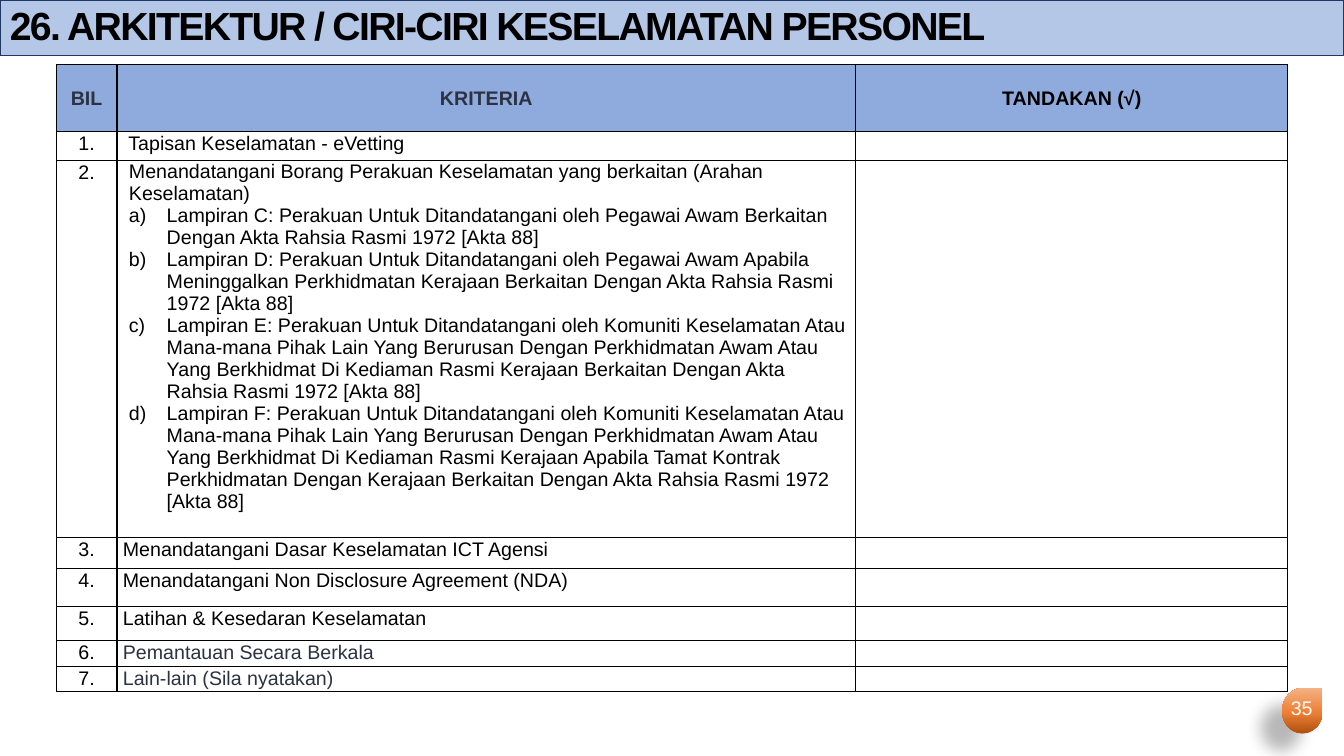
from lxml import etree
from pptx import Presentation
from pptx.dml.color import RGBColor
from pptx.enum.shapes import MSO_SHAPE
from pptx.enum.text import MSO_ANCHOR, PP_ALIGN
from pptx.oxml.ns import qn
from pptx.util import Pt

RECTANGLE, TEARDROP = MSO_SHAPE.RECTANGLE, MSO_SHAPE.TEAR
TOP, MIDDLE = MSO_ANCHOR.TOP, MSO_ANCHOR.MIDDLE
LEFT, CENTER = PP_ALIGN.LEFT, PP_ALIGN.CENTER

COLORS = {
    "black": "000000", "white": "FFFFFF", "slate": "2C3242",
    "banner": "B4C7E7", "banner_line": "203864", "header": "8FAADC",
    "badge_dark": "B0500F", "badge_mid": "EE8137", "badge_light": "F4B183",
}
BADGE_STOPS = [(0, "badge_dark"), (48, "badge_mid"), (100, "badge_light")]

COLUMN_WIDTHS = [43.2, 527.8, 308.6]
ROW_HEIGHTS = [47.9, 20.7, 269.3, 22.1, 27.1, 24.3, 18.6, 17.9]
HEADERS = [("BIL", "slate"), ("KRITERIA", "slate"), ("TANDAKAN (√)", "black")]
# Text, colour and left indent of each criterion
CRITERIA = [
    ("Tapisan Keselamatan - eVetting", "black", 3.9),
    ("Menandatangani Borang Perakuan Keselamatan yang berkaitan "
     "(Arahan Keselamatan)", "black", 4.3),
    ("Menandatangani Dasar Keselamatan ICT Agensi", "black", 0),
    ("Menandatangani Non Disclosure Agreement (NDA)", "black", 0),
    ("Latihan & Kesedaran Keselamatan", "black", 0),
    ("Pemantauan Secara Berkala", "slate", 0),
    ("Lain-lain (Sila nyatakan)", "slate", 0),
]
FORMS_ROW = 2
FORMS = [
    "Lampiran C: Perakuan Untuk Ditandatangani oleh Pegawai Awam Berkaitan "
    "Dengan Akta Rahsia Rasmi 1972 [Akta 88]",
    "Lampiran D: Perakuan Untuk Ditandatangani oleh Pegawai Awam Apabila "
    "Meninggalkan Perkhidmatan Kerajaan Berkaitan Dengan Akta Rahsia Rasmi "
    "1972 [Akta 88]",
    "Lampiran E: Perakuan Untuk Ditandatangani oleh Komuniti Keselamatan Atau "
    "Mana-mana Pihak Lain Yang Berurusan Dengan Perkhidmatan Awam Atau Yang "
    "Berkhidmat Di Kediaman Rasmi Kerajaan Berkaitan Dengan Akta Rahsia Rasmi "
    "1972 [Akta 88]",
    "Lampiran F: Perakuan Untuk Ditandatangani oleh Komuniti Keselamatan Atau "
    "Mana-mana Pihak Lain Yang Berurusan Dengan Perkhidmatan Awam Atau Yang "
    "Berkhidmat Di Kediaman Rasmi Kerajaan Apabila Tamat Kontrak Perkhidmatan "
    "Dengan Kerajaan Berkaitan Dengan Akta Rahsia Rasmi 1972 [Akta 88]",
]


def add_element(parent, tag, **attributes):
    element = etree.SubElement(parent, qn(tag))
    for name, value in attributes.items():
        element.set(name, str(value))
    return element


class SlideBuilder:
    font_name = "Arial"
    body_size = 14

    def __init__(self, slide):
        self.slide = slide

    def color(self, name):
        return RGBColor.from_string(COLORS[name])

    def set_text(self, paragraph, text, color="black", size=body_size, bold=False,
                 align=LEFT, line_spacing=1.0, space_after=0, indent=0, hanging=0):
        paragraph.text = text
        paragraph.alignment = align
        paragraph.line_spacing = line_spacing
        paragraph.space_after = Pt(space_after)
        paragraph.font.name = self.font_name
        paragraph.font.size = Pt(size)
        paragraph.font.bold = bold
        paragraph.font.color.rgb = self.color(color)
        properties = paragraph._p.get_or_add_pPr()
        properties.set("marL", str(Pt(indent)))
        properties.set("indent", str(Pt(-hanging)))

    def shape(self, kind, left, top, width, height):
        shape = self.slide.shapes.add_shape(
            kind, Pt(left), Pt(top), Pt(width), Pt(height))
        shape.shadow.inherit = False
        return shape

    def banner(self, text, width, height):
        shape = self.shape(RECTANGLE, 0, 0, width, height)
        shape.fill.solid()
        shape.fill.fore_color.rgb = self.color("banner")
        shape.line.color.rgb = self.color("banner_line")
        shape.line.width = Pt(0.75)
        shape.text_frame.vertical_anchor = MIDDLE
        paragraph = shape.text_frame.paragraphs[0]
        self.set_text(paragraph, text, size=28, bold=True, line_spacing=0.9)
        paragraph.runs[0]._r.get_or_add_rPr().set("spc", "-120")

    def badge(self, left, top, width, height):
        shape = self.shape(TEARDROP, left, top, width, height)
        shape.line.fill.background()
        shape.fill.gradient()
        shape.fill.gradient_angle = 90
        properties = shape._element.spPr
        stops = properties.find(".//" + qn("a:gsLst"))
        for stop in list(stops):
            stops.remove(stop)
        for position, color in BADGE_STOPS:
            stop = add_element(stops, "a:gs", pos=position * 1000)
            add_element(stop, "a:srgbClr", val=COLORS[color])
        # Soft shadow to the lower left
        shadow = add_element(
            properties.find(qn("a:effectLst")), "a:outerShdw", blurRad=Pt(11.8),
            dist=Pt(19.7), dir=141 * 60000, algn="ctr", rotWithShape=0)
        shadow_color = add_element(shadow, "a:srgbClr", val=COLORS["black"])
        add_element(shadow_color, "a:alpha", val=28000)

    def label(self, text, left, top, width, height):
        box = self.slide.shapes.add_textbox(
            Pt(left), Pt(top), Pt(width), Pt(height))
        box.text_frame.word_wrap = True
        self.set_text(box.text_frame.paragraphs[0], text, color="white", align=CENTER)

    def table(self, left, top, widths, heights):
        frame = self.slide.shapes.add_table(
            len(heights), len(widths), Pt(left), Pt(top),
            Pt(sum(widths)), Pt(sum(heights)))
        table = frame.table
        table.first_row = table.horz_banding = False
        for column, width in zip(table.columns, widths):
            column.width = Pt(width)
        for row, height in zip(table.rows, heights):
            row.height = Pt(height)
        return table

    def cell(self, cell, text="", fill=None, anchor=TOP, **style):
        cell.margin_left = cell.margin_right = Pt(4.3)
        cell.margin_top = cell.margin_bottom = 0
        cell.vertical_anchor = anchor
        properties = cell._tc.get_or_add_tcPr()
        for side in ("a:lnL", "a:lnR", "a:lnT", "a:lnB"):
            border = add_element(properties, side, w=Pt(1))
            solid = add_element(border, "a:solidFill")
            add_element(solid, "a:srgbClr", val=COLORS["black"])
        if fill:
            cell.fill.solid()
            cell.fill.fore_color.rgb = self.color(fill)
        else:
            cell.fill.background()
        style = {"line_spacing": 1.07, "space_after": 8, **style}
        self.set_text(cell.text_frame.paragraphs[0], text, **style)

    def lettered_list(self, cell, items):
        for item in items:
            paragraph = cell.text_frame.add_paragraph()
            self.set_text(paragraph, item, indent=31.3, hanging=27)
            properties = paragraph._p.get_or_add_pPr()
            bullet = etree.Element(qn("a:buAutoNum"), type="alphaLcParenR")
            # Bullets come before the default run properties
            properties.find(qn("a:defRPr")).addprevious(bullet)


def main():
    presentation = Presentation()
    presentation.slide_width, presentation.slide_height = Pt(960), Pt(540)
    slide = presentation.slides.add_slide(presentation.slide_layouts[6])
    builder = SlideBuilder(slide)

    # Page number and title
    builder.badge(915.8, 491.5, 29, 32.5)
    builder.label("35", 912.2, 493.9, 35.3, 28.8)
    builder.banner("26. ARKITEKTUR / CIRI-CIRI KESELAMATAN PERSONEL", 960, 39.6)

    # Checklist table
    table = builder.table(40.3, 46.1, COLUMN_WIDTHS, ROW_HEIGHTS)
    for column, (text, color) in enumerate(HEADERS):
        builder.cell(table.cell(0, column), text, fill="header", anchor=MIDDLE,
                     color=color, bold=True, align=CENTER)
    for row, (text, color, indent) in enumerate(CRITERIA, start=1):
        spacing = {"line_spacing": 1.0, "space_after": 0} if row == FORMS_ROW else {}
        builder.cell(table.cell(row, 0), f"{row}.", align=CENTER)
        builder.cell(table.cell(row, 1), text, color=color, indent=indent, **spacing)
        builder.cell(table.cell(row, 2))
    builder.lettered_list(table.cell(FORMS_ROW, 1), FORMS)

    presentation.save("out.pptx")


if __name__ == "__main__":
    main()
